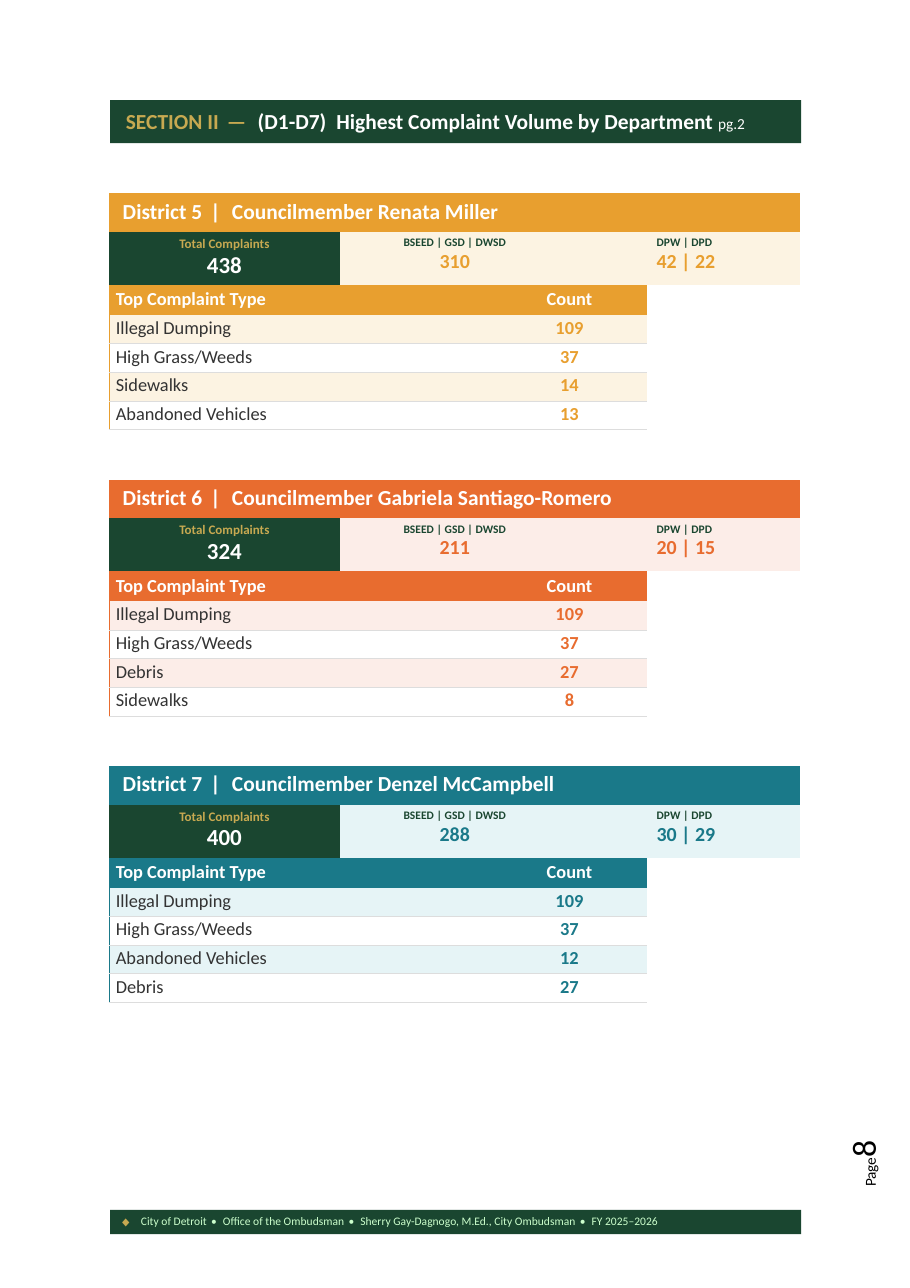
"""Build the district complaint page with one summary table per council district."""
from dataclasses import dataclass

from lxml import etree
from pptx import Presentation
from pptx.dml.color import RGBColor
from pptx.enum.shapes import MSO_SHAPE
from pptx.enum.text import MSO_ANCHOR, PP_ALIGN
from pptx.oxml.ns import qn
from pptx.util import Cm, Pt

RECT = MSO_SHAPE.RECTANGLE
TOP = MSO_ANCHOR.TOP
LEFT, CENTER = PP_ALIGN.LEFT, PP_ALIGN.CENTER
PLAIN_TABLE = "{2D5ABB26-0587-4C30-8999-92F81FD0307C}"


@dataclass(frozen=True)
class Theme:
    green: str = "1A4630"
    gold: str = "C7A951"
    mint: str = "CCFFCC"
    white: str = "FFFFFF"
    black: str = "000000"
    ink: str = "333333"
    rule: str = "DDDDDD"
    font: str = "Calibri"
    symbol_font: str = "Times New Roman"
    heading: float = 14
    total: float = 15
    figure: float = 13
    body: float = 12
    note: float = 10
    label: float = 8.5
    small: float = 7.5
    diamond: float = 9
    page_number: float = 22
    wide_gap: float = 2.1
    footer_gap: float = 1.1


T = Theme()

SECTION = ("SECTION II", " — ", "(D1-D7)", " ",
           "Highest Complaint Volume by Department ", "pg.2")
LABELS = ("Total Complaints", "BSEED | GSD | DWSD", "DPW | DPD")
HEADERS = ("Top Complaint Type", "Count")
DISTRICTS = [
    {"name": "District 5", "member": "Councilmember Renata Miller",
     "color": "E89F2F", "tint": "FCF3E2", "figures": ("438", "310", "42 | 22"),
     "complaints": [("Illegal Dumping", 109), ("High Grass/Weeds", 37),
                    ("Sidewalks", 14), ("Abandoned Vehicles", 13)]},
    {"name": "District 6", "member": "Councilmember Gabriela Santiago-Romero",
     "color": "E86C2F", "tint": "FCEDE8", "figures": ("324", "211", "20 | 15"),
     "complaints": [("Illegal Dumping", 109), ("High Grass/Weeds", 37),
                    ("Debris", 27), ("Sidewalks", 8)]},
    {"name": "District 7", "member": "Councilmember Denzel McCampbell",
     "color": "1A7989", "tint": "E6F4F6", "figures": ("400", "288", "30 | 29"),
     "complaints": [("Illegal Dumping", 109), ("High Grass/Weeds", 37),
                    ("Abandoned Vehicles", 12), ("Debris", 27)]},
]
FOOTER = ("City of Detroit", "Office of the Ombudsman",
          "Sherry Gay-Dagnogo, M.Ed., City Ombudsman", "FY 2025–2026")

BAR_LEFT, BAR_WIDTH = 2.54, 15.93
TABLE_LEFT, TABLE_TOP, TABLE_PITCH = 2.52, 4.46, 6.6
COLS = (5.31, 7.09, 3.53)
ROWS = (0.89, 1.22, 0.69, 0.66, 0.66, 0.66, 0.66)
COUNT_INDENT = 3.51


def rgb(value):
    return RGBColor.from_string(value)


def write(p, runs, spacing=None, align=LEFT, font=T.font):
    """Fill a paragraph from (text, size, color, bold, tracking) tuples."""
    p.alignment = align
    if spacing:
        p.line_spacing = Pt(spacing)
    for text, size, color, bold, tracking in runs:
        r = p.add_run()
        r.text = text
        r.font.name, r.font.size, r.font.bold = font, Pt(size), bold
        r.font.color.rgb = rgb(color)
        if tracking:
            r.font._element.set("spc", str(round(tracking * 100)))


def set_margins(holder, left=0, top=0, right=0):
    holder.margin_left, holder.margin_top = Cm(left), Cm(top)
    holder.margin_right, holder.margin_bottom = Cm(right), Cm(0)


def add_label(slide, box, runs, spacing, font=T.font):
    tf = slide.shapes.add_textbox(*map(Cm, box)).text_frame
    tf.word_wrap = True
    set_margins(tf)
    write(tf.paragraphs[0], runs, spacing, font=font)
    return tf


def paint(cell, color):
    cell.fill.solid()
    cell.fill.fore_color.rgb = rgb(color)


def add_border(cell, side, color, width):
    tc_pr = cell._tc.get_or_add_tcPr()
    ln = etree.Element(qn("a:ln" + side), w=str(Pt(width)))
    fill = etree.SubElement(ln, qn("a:solidFill"))
    etree.SubElement(fill, qn("a:srgbClr"), val=color)
    tc_pr.insert(len(tc_pr.findall(qn("a:lnL"))), ln)


def fill_summary(table, district):
    color, tint = district["color"], district["tint"]
    styles = [
        (T.green, T.label, T.gold, T.total, T.white, (10.2, 17.9), CENTER, 0, 0),
        (tint, T.small, T.green, T.figure, color, (8.9, 15.6), CENTER, 0, 1.78),
        (tint, T.small, T.green, T.figure, color, (8.9, 15.6), LEFT, 0.22, 0),
    ]
    for col, style in enumerate(styles):
        back, label_size, label_color, size, ink, leads, align, left, right = style
        cell = table.cell(1, col)
        paint(cell, back)
        set_margins(cell, left, 0.1, right)
        tf = cell.text_frame
        write(tf.paragraphs[0], [(LABELS[col], label_size, label_color, True, 0)],
              leads[0], align)
        write(tf.add_paragraph(), [(district["figures"][col], size, ink, True, 0)],
              leads[1], align)


def fill_complaints(table, district):
    color = district["color"]
    for row, values in enumerate([HEADERS] + district["complaints"], start=2):
        header = row == 2
        for col, value in enumerate(values):
            cell = table.cell(row, col)
            set_margins(cell, (0.15, COUNT_INDENT)[col], 0.08 if header else 0.05)
            ink = T.white if header else (T.ink, color)[col]
            write(cell.text_frame.paragraphs[0],
                  [(str(value), T.body, ink, header or col == 1, 0)],
                  align=(LEFT, CENTER)[col])
            if header:
                paint(cell, color)
                continue
            if row % 2:
                paint(cell, district["tint"])
            if col == 0:
                add_border(cell, "L", color, 0.75)
            add_border(cell, "B", T.rule, 0.25)


def add_district(slide, index, district):
    frame = slide.shapes.add_table(
        len(ROWS), len(COLS), Cm(TABLE_LEFT), Cm(TABLE_TOP + index * TABLE_PITCH),
        Cm(sum(COLS)), Cm(sum(ROWS)))
    table = frame.table
    table.first_row = table.horz_banding = False
    table._tbl.tblPr.find(qn("a:tableStyleId")).text = PLAIN_TABLE
    for column, width in zip(table.columns, COLS):
        column.width = Cm(width)
    for row, height in zip(table.rows, ROWS):
        row.height = Cm(height)
    title = table.cell(0, 0)
    title.merge(table.cell(0, 2))
    table.cell(2, 2).merge(table.cell(6, 2))
    paint(title, district["color"])
    set_margins(title, 0.31, 0.12)
    write(title.text_frame.paragraphs[0],
          [(text, T.heading, T.white, True, gap) for text, gap in
           ((district["name"], 0), (" | ", T.wide_gap), (district["member"], 0))])
    fill_summary(table, district)
    fill_complaints(table, district)


def add_title(slide):
    s = slide.shapes.title
    s.left, s.top, s.width, s.height = map(Cm, (BAR_LEFT, 2.31, BAR_WIDTH, 0.99))
    paint(s, T.green)
    tf = s.text_frame
    tf.vertical_anchor = TOP
    set_margins(tf, 0.36, 0.18)
    sizes = [T.heading] * 5 + [T.note]
    colors = [T.gold] * 2 + [T.white] * 4
    gaps = [0, T.wide_gap, 0, 3.2, 0, 0]
    write(tf.paragraphs[0],
          [(text, size, color, size == T.heading, gap)
           for text, size, color, gap in zip(SECTION, sizes, colors, gaps)])


def add_footer(slide):
    bar = slide.shapes.add_shape(RECT, *map(Cm, (BAR_LEFT, 27.89, BAR_WIDTH, 0.56)))
    bar.shadow.inherit = False
    paint(bar, T.green)
    bar.line.fill.background()
    add_label(slide, (2.74, 28.01, 0.4, 0.38),
              [("◆", T.diamond, T.gold, True, 0)], 9.8, T.symbol_font)
    runs = []
    for part in FOOTER:
        if runs:
            runs.append((" • ", T.small, T.mint, False, T.footer_gap))
        runs.append((part, T.small, T.mint, False, 0))
    add_label(slide, (3.25, 28.01, 14, 0.33), runs, 8.2)
    page = add_label(slide, (19.43, 26.19, 1.02, 1.17),
                     [("Page", T.note, T.black, False, -0.1),
                      ("8", T.page_number, T.black, False, 0)], 26.1)
    page._txBody.bodyPr.set("vert", "vert270")


def main():
    prs = Presentation()
    prs.slide_width, prs.slide_height = Cm(20.98), Cm(29.69)
    slide = prs.slides.add_slide(prs.slide_layouts[5])
    add_title(slide)
    for index, district in enumerate(DISTRICTS):
        add_district(slide, index, district)
    add_footer(slide)
    prs.save("out.pptx")


if __name__ == "__main__":
    main()
